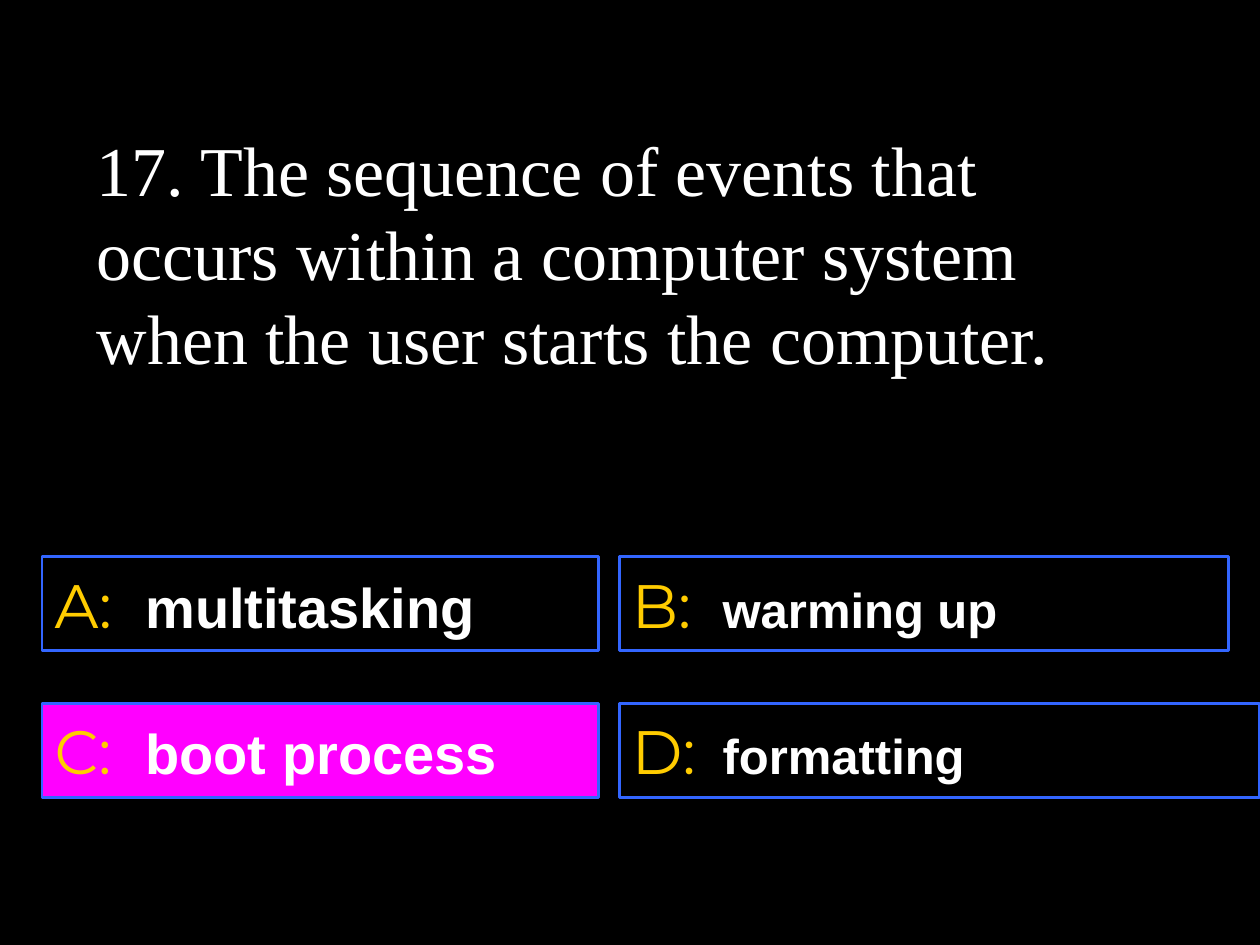
from dataclasses import dataclass

from lxml import etree
from pptx import Presentation
from pptx import util as u
from pptx.dml.color import RGBColor
from pptx.enum import shapes, text
from pptx.oxml import ns

# Content: letter, answer, answer size, box width (cm), highlighted
QUESTION = ("17. The sequence of events that occurs within a computer system "
            "when the user starts the computer.")
ANSWERS = [
    ("A:", "multitasking", 32, 11.22, False),
    ("B:", "warming up", 28, 12.28, False),
    ("C:", "boot process", 32, 11.22, True),
    ("D:", "formatting", 28, 12.9, False),
]
COLUMN_LEFTS = (0.85, 12.49)
FIRST_TOP, ROW_PITCH, BOX_HEIGHT = 11.22, 2.96, 1.9
ANSWER_TAB = 1.83


@dataclass(frozen=True)
class Theme:
    background: str = "000000"
    border: str = "3366FF"
    highlight: str = "FF00FF"
    letter: str = "FFCC00"
    body: str = "FFFFFF"
    question_font: str = "Times New Roman"
    letter_font: str = "Montserrat"
    answer_font: str = "Arial"
    question_size: int = 40
    question_leading: int = 48
    letter_size: int = 35
    border_width: float = 1.5


THEME = Theme()


def add_text(para, content, *, font, size, color, bold=False):
    span = para.add_run()
    span.text = content
    span.font.name = font
    span.font.size = u.Pt(size)
    span.font.bold = bold
    span.font.color.rgb = RGBColor.from_string(color)


def fill_box(box, color, opacity=100):
    box.fill.solid()
    box.fill.fore_color.rgb = RGBColor.from_string(color)
    if opacity < 100:
        tint = box.fill._xPr.find(".//" + ns.qn("a:srgbClr"))
        etree.SubElement(tint, ns.qn("a:alpha"), val=str(opacity * 1000))


def set_tab(para, position):
    stops = etree.SubElement(para._p.get_or_add_pPr(), ns.qn("a:tabLst"))
    etree.SubElement(stops, ns.qn("a:tab"), pos=str(u.Cm(position)), algn="l")


def add_question(page):
    box = page.shapes.add_textbox(u.Cm(1.7), u.Cm(1.7), u.Cm(21.59), u.Cm(6.78))
    box.text_frame.word_wrap = True
    box.text_frame.vertical_anchor = text.MSO_ANCHOR.MIDDLE
    para = box.text_frame.paragraphs[0]
    para.line_spacing = u.Pt(THEME.question_leading)
    add_text(para, QUESTION, font=THEME.question_font,
             size=THEME.question_size, color=THEME.body)


def add_answer(page, index, letter, answer, size, width, highlighted):
    row, column = divmod(index, len(COLUMN_LEFTS))
    box = page.shapes.add_shape(
        shapes.MSO_SHAPE.RECTANGLE, u.Cm(COLUMN_LEFTS[column]),
        u.Cm(FIRST_TOP + row * ROW_PITCH), u.Cm(width), u.Cm(BOX_HEIGHT))
    box.shadow.inherit = False
    if highlighted:
        fill_box(box, THEME.highlight)
    else:
        fill_box(box, THEME.background, opacity=50)
    box.line.color.rgb = RGBColor.from_string(THEME.border)
    box.line.width = u.Pt(THEME.border_width)

    # Letter and answer, aligned by a tab stop
    box.text_frame.word_wrap = False
    box.text_frame.vertical_anchor = text.MSO_ANCHOR.MIDDLE
    para = box.text_frame.paragraphs[0]
    para.alignment = text.PP_ALIGN.LEFT
    set_tab(para, ANSWER_TAB)
    add_text(para, letter + "\t", font=THEME.letter_font,
             size=THEME.letter_size, color=THEME.letter)
    add_text(para, answer, font=THEME.answer_font, size=size,
             color=THEME.body, bold=True)


def main():
    deck = Presentation()
    deck.slide_width, deck.slide_height = u.Cm(25.4), u.Cm(19.05)
    page = deck.slides.add_slide(deck.slide_layouts[6])
    page.background.fill.solid()
    page.background.fill.fore_color.rgb = RGBColor.from_string(THEME.background)

    # Answer grid, then the question above it
    for index, entry in enumerate(ANSWERS):
        add_answer(page, index, *entry)
    add_question(page)
    deck.save("out.pptx")


if __name__ == "__main__":
    main()
